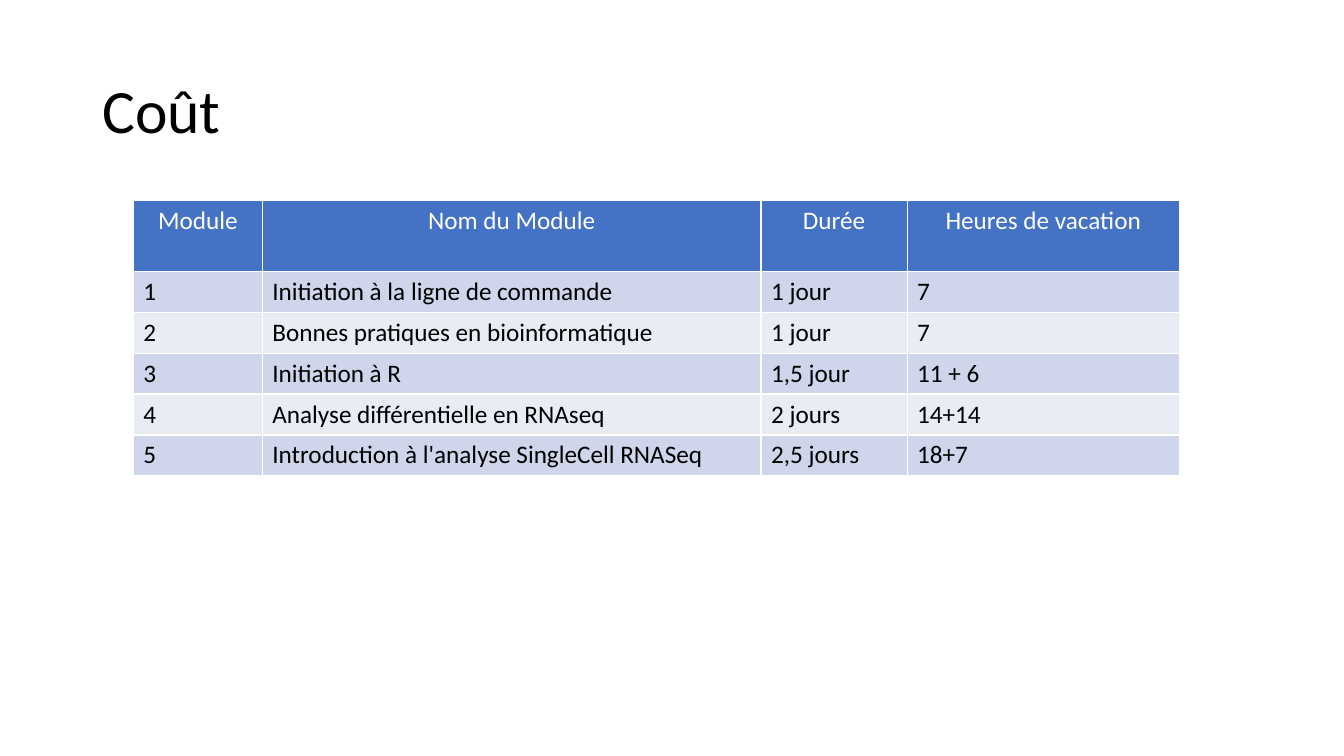
from lxml.etree import SubElement
from pptx import Presentation
from pptx.dml.color import RGBColor
from pptx.enum.text import MSO_ANCHOR, PP_ALIGN
from pptx.oxml.ns import qn
from pptx.util import Cm, Pt

COLORS = {
    "black": "000000",
    "white": "FFFFFF",
    "header": "4472C4",
    "odd": "CFD5EA",
    "even": "E9EBF5",
}
COLUMN_WIDTHS = [3.25, 12.57, 3.68, 6.86]
HEADER_HEIGHT = 1.78
ROW_HEIGHT = 1.03
MODULES = [
    ("Module", "Nom du Module", "Durée", "Heures de vacation"),
    ("1", "Initiation à la ligne de commande", "1 jour", "7"),
    ("2", "Bonnes pratiques en bioinformatique", "1 jour", "7"),
    ("3", "Initiation à R", "1,5 jour", "11 + 6"),
    ("4", "Analyse différentielle en RNAseq", "2 jours", "14+14"),
    ("5", "Introduction à l'analyse SingleCell RNASeq", "2,5 jours", "18+7"),
]


def rgb(name):
    return RGBColor.from_string(COLORS[name])


def write(tf, text, size=18, color="black", align=PP_ALIGN.LEFT, spacing=1.0):
    p = tf.paragraphs[0]
    p.alignment = align
    p.line_spacing = spacing
    r = p.add_run()
    r.text = text
    r.font.name = "Calibri"
    r.font.size = Pt(size)
    r.font.bold = False
    r.font.color.rgb = rgb(color)


def set_borders(cell, color="white", width=1):
    """Draw all four sides; call before filling, as lines precede the fill."""
    tc_pr = cell._tc.get_or_add_tcPr()
    for side in ("a:lnL", "a:lnR", "a:lnT", "a:lnB"):
        ln = SubElement(tc_pr, qn(side), w=str(Pt(width)))
        fill = SubElement(ln, qn("a:solidFill"))
        SubElement(fill, qn("a:srgbClr"), val=COLORS[color])


def add_title(s, text):
    tf = s.shapes.add_textbox(Cm(2.33), Cm(1.01), Cm(29.21), Cm(3.68)).text_frame
    tf.word_wrap = True
    tf.vertical_anchor = MSO_ANCHOR.MIDDLE
    write(tf, text, size=44, spacing=0.9)


def add_module_table(s, rows):
    height = HEADER_HEIGHT + ROW_HEIGHT * (len(rows) - 1)
    table = s.shapes.add_table(
        len(rows), len(COLUMN_WIDTHS),
        Cm(3.36), Cm(5.06), Cm(sum(COLUMN_WIDTHS)), Cm(height),
    ).table
    for column, width in zip(table.columns, COLUMN_WIDTHS):
        column.width = Cm(width)
    for i, row in enumerate(rows):
        is_header = i == 0
        table.rows[i].height = Cm(HEADER_HEIGHT if is_header else ROW_HEIGHT)
        background = "header" if is_header else "odd" if i % 2 else "even"
        for j, text in enumerate(row):
            cell = table.cell(i, j)
            set_borders(cell)
            cell.fill.solid()
            cell.fill.fore_color.rgb = rgb(background)
            write(
                cell.text_frame, text,
                color="white" if is_header else "black",
                align=PP_ALIGN.CENTER if is_header else PP_ALIGN.LEFT,
            )


def main():
    prs = Presentation()
    prs.slide_width, prs.slide_height = Cm(33.87), Cm(19.05)
    s = prs.slides.add_slide(prs.slide_layouts[6])
    add_title(s, "Coût")
    add_module_table(s, MODULES)
    prs.save("out.pptx")


if __name__ == "__main__":
    main()
